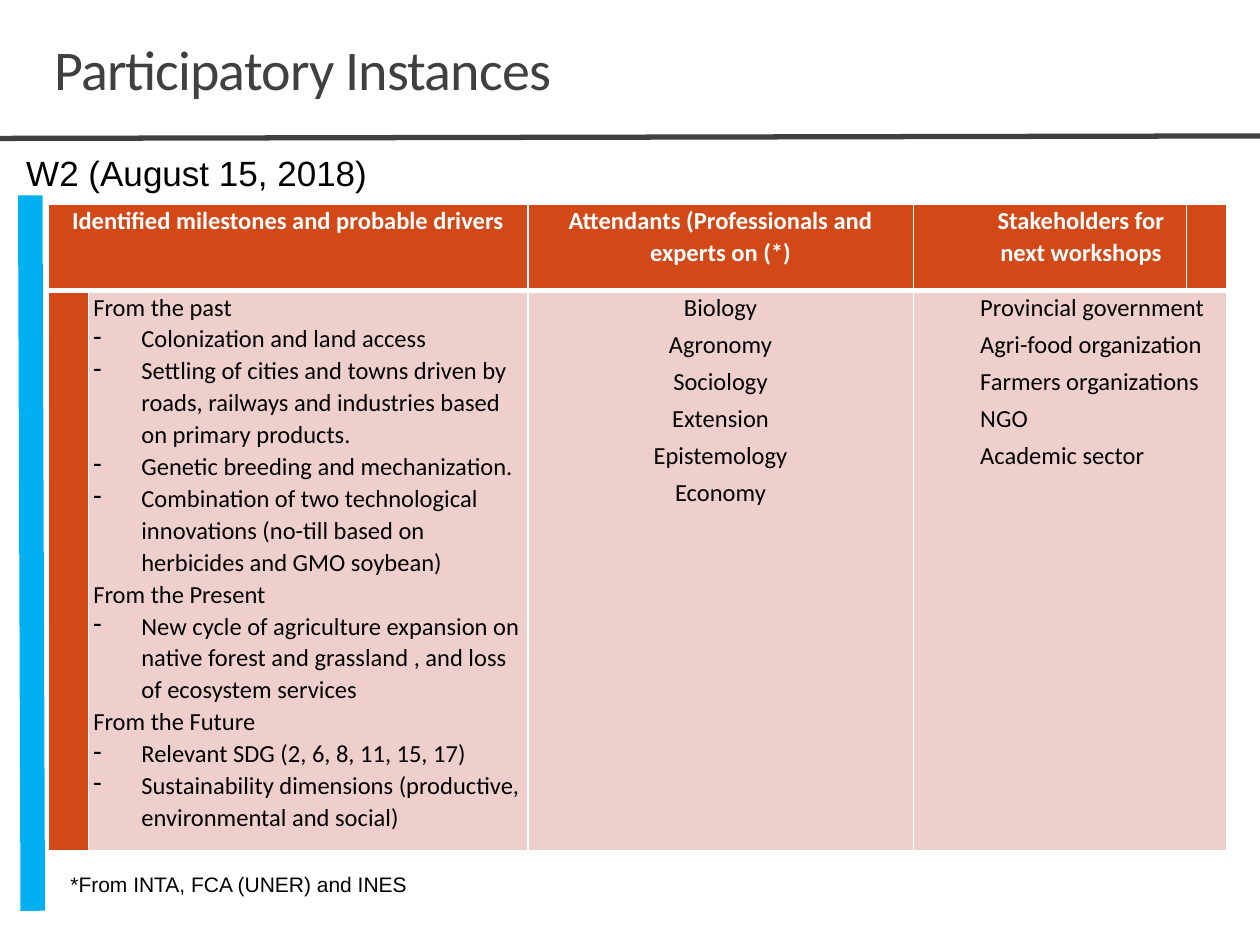
from dataclasses import dataclass

from lxml.etree import SubElement
from pptx import Presentation
from pptx.dml.color import RGBColor
from pptx.enum.shapes import MSO_CONNECTOR
from pptx.enum.text import MSO_ANCHOR, MSO_AUTO_SIZE, PP_ALIGN
from pptx.oxml.ns import qn
from pptx.util import Cm, Pt

ORANGE, PINK, WHITE, BLACK = "D34817", "EFCFCC", "FFFFFF", "000000"
GREY, BLUE = "404040", "00B0F0"
COLUMN_WIDTHS = (0.81, 8.86, 7.77, 5.51, 0.81)
ROW_HEIGHTS = (1.75, 11.3)
LEFT_MARGIN = 1.25
BULLET_INDENT = 0.97


@dataclass
class Line:
    start: tuple[float, float]
    end: tuple[float, float]
    color: str
    weight: float


@dataclass
class Note:
    text: str
    frame: tuple[float, float, float, float]
    size: int
    wrap: bool


@dataclass
class CellText:
    row: int
    column: int
    items: list[str]
    align: PP_ALIGN = PP_ALIGN.LEFT
    margin: float = 0
    before: float = 0
    after: float = 3


LINES = [
    Line((0, 2.79), (25.4, 2.74), GREY, 3),
    Line((0.61, 3.94), (0.66, 18.36), BLUE, 14),
]
WORKSHOP = Note("W2 (August 15, 2018)", (0.28, 2.8, 20.75, 1.36), 20, True)
SOURCES = Note("*From INTA, FCA (UNER) and INES", (1.17, 17.45, 7.37, 0.76), 12, False)
MILESTONES = [
    "From the past",
    "- Colonization and land access",
    "- Settling of cities and towns driven by roads, railways and industries based on primary products.",
    "- Genetic breeding and mechanization.",
    "- Combination of two technological innovations (no-till based on herbicides and GMO soybean)",
    "From the Present",
    "- New cycle of agriculture expansion on native forest and grassland , and loss of ecosystem services",
    "From the Future",
    "- Relevant SDG (2, 6, 8, 11, 15, 17)",
    "- Sustainability dimensions (productive, environmental and social)",
]
FIELDS = ["Biology", "Agronomy", "Sociology", "Extension", "Epistemology", "Economy"]
STAKEHOLDERS = [
    "Provincial government",
    "Agri-food organization",
    "Farmers organizations",
    "NGO",
    "Academic sector",
]
CENTER = PP_ALIGN.CENTER
CELLS = [
    CellText(0, 0, ["Identified milestones and probable drivers"], CENTER, before=3),
    CellText(0, 2, ["Attendants (Professionals and experts on (*)"], CENTER, before=3),
    CellText(0, 3, ["Stakeholders for next workshops"], CENTER, LEFT_MARGIN, 3),
    CellText(1, 1, MILESTONES, after=0),
    CellText(1, 2, FIELDS, CENTER),
    CellText(1, 3, STAKEHOLDERS, margin=LEFT_MARGIN),
]


def rgb(color: str) -> RGBColor:
    return RGBColor.from_string(color)


def set_font(font, name: str, size: float, color: str, bold: bool = False) -> None:
    font.name, font.size, font.bold = name, Pt(size), bold
    font.color.rgb = rgb(color)


def place(shape, left: float, top: float, width: float, height: float) -> None:
    shape.left, shape.top = Cm(left), Cm(top)
    shape.width, shape.height = Cm(width), Cm(height)


def write_title(title, text: str) -> None:
    place(title, 0.84, 0.66, 23.32, 1.52)
    frame = title.text_frame
    frame.auto_size = MSO_AUTO_SIZE.NONE
    frame.vertical_anchor = MSO_ANCHOR.BOTTOM
    para = frame.paragraphs[0]
    para.alignment, para.line_spacing = PP_ALIGN.LEFT, 0.85
    span = para.add_run()
    span.text = text
    set_font(span.font, "Calibri", 32, GREY)
    span._r.get_or_add_rPr().set("spc", "-50")


def draw_line(page, line: Line) -> None:
    connector = page.shapes.add_connector(
        MSO_CONNECTOR.STRAIGHT, *(Cm(value) for value in line.start + line.end)
    )
    connector.line.color.rgb = rgb(line.color)
    connector.line.width = Pt(line.weight)
    SubElement(connector._element.spPr, qn("a:effectLst"))


def draw_note(page, note: Note) -> None:
    box = page.shapes.add_textbox(*(Cm(value) for value in note.frame))
    frame = box.text_frame
    frame.word_wrap = note.wrap
    frame.vertical_anchor = MSO_ANCHOR.MIDDLE
    para = frame.paragraphs[0]
    para.text = note.text
    set_font(para.font, "Arial", note.size, BLACK)


def style_cell(cell, row: int, fill: str) -> None:
    properties = cell._tc.get_or_add_tcPr()
    top, bottom = ((1, 3), (3, 1))[row]
    for edge, weight in (("lnL", 1), ("lnR", 1), ("lnT", top), ("lnB", bottom)):
        border = SubElement(properties, qn(f"a:{edge}"), w=str(Pt(weight)))
        solid = SubElement(border, qn("a:solidFill"))
        SubElement(solid, qn("a:srgbClr"), val=WHITE)
    cell.fill.solid()
    cell.fill.fore_color.rgb = rgb(fill)


def write_cell(cell, content: CellText) -> None:
    cell.margin_left = cell.margin_right = Cm(0.1)
    cell.margin_top = cell.margin_bottom = 0
    header = content.row == 0
    frame = cell.text_frame
    for index, item in enumerate(content.items):
        para = frame.add_paragraph() if index else frame.paragraphs[0]
        para.text = item.removeprefix("- ")
        para.alignment, para.line_spacing = content.align, 1.07
        para.space_before, para.space_after = Pt(content.before), Pt(content.after)
        properties = para._p.get_or_add_pPr()
        if item.startswith("- "):
            properties.set("marL", str(Cm(BULLET_INDENT)))
            properties.set("indent", str(-Cm(BULLET_INDENT)))
            SubElement(properties, qn("a:buChar"), char="-")
        else:
            properties.set("marL", str(Cm(content.margin)))
        set_font(para.font, "Calibri", 14, WHITE if header else BLACK, header)


def draw_table(page) -> None:
    table = page.shapes.add_table(
        len(ROW_HEIGHTS), len(COLUMN_WIDTHS),
        Cm(0.97), Cm(4.11), Cm(sum(COLUMN_WIDTHS)), Cm(sum(ROW_HEIGHTS)),
    ).table
    for column, width in zip(table.columns, COLUMN_WIDTHS):
        column.width = Cm(width)
    for row, height in zip(table.rows, ROW_HEIGHTS):
        row.height = Cm(height)
    for row in range(len(ROW_HEIGHTS)):
        for column in range(len(COLUMN_WIDTHS)):
            fill = ORANGE if row == 0 or column == 0 else PINK
            style_cell(table.cell(row, column), row, fill)
    table.cell(0, 0).merge(table.cell(0, 1))
    table.cell(1, 3).merge(table.cell(1, 4))
    for content in CELLS:
        write_cell(table.cell(content.row, content.column), content)


def main() -> None:
    deck = Presentation()
    deck.slide_width, deck.slide_height = Cm(25.4), Cm(19.05)
    page = deck.slides.add_slide(deck.slide_layouts[5])
    write_title(page.shapes.title, "Participatory Instances")
    for line in LINES:
        draw_line(page, line)
    draw_note(page, WORKSHOP)
    draw_table(page)
    draw_note(page, SOURCES)
    deck.save("out.pptx")


if __name__ == "__main__":
    main()
